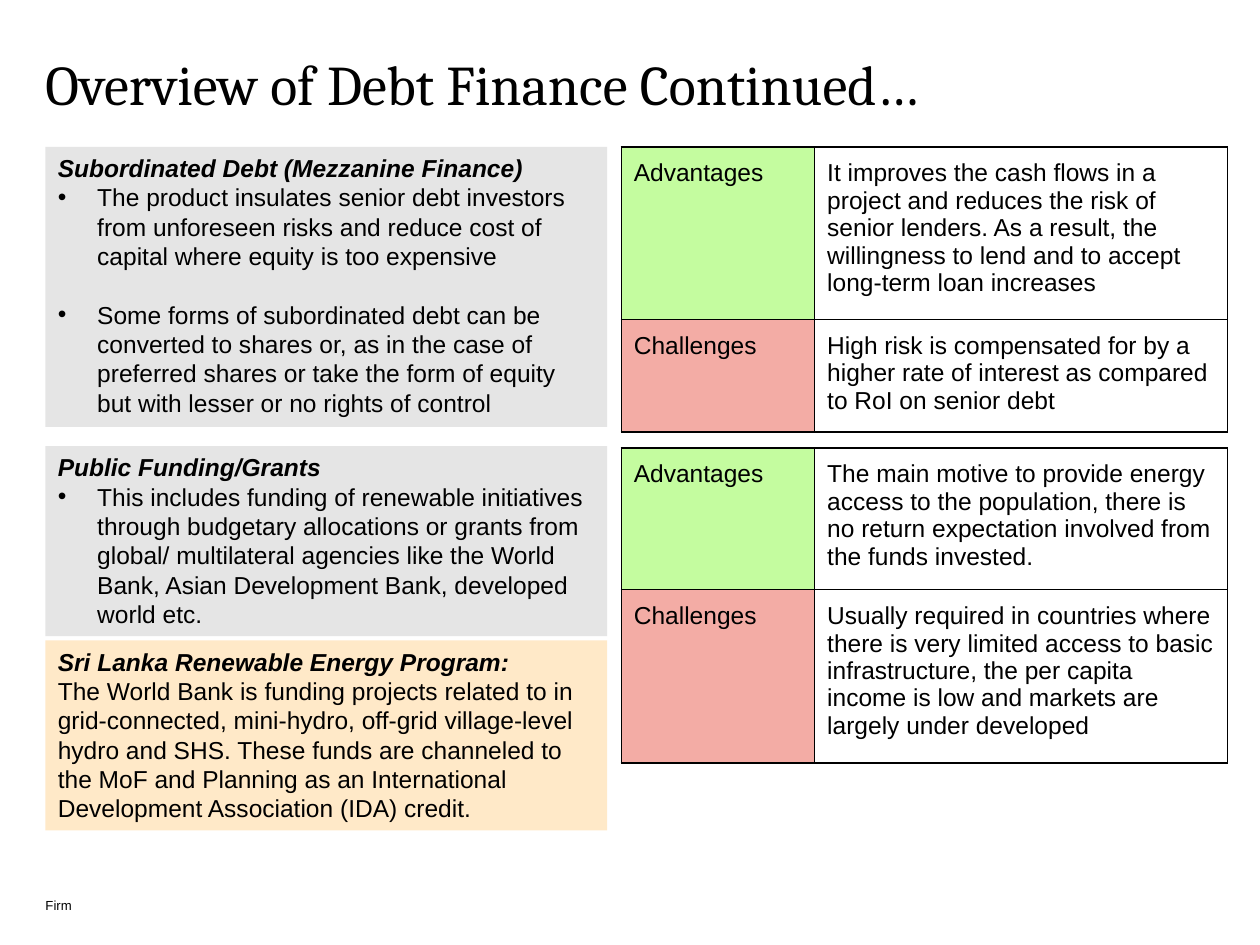
import pptx
import pptx.util
import pptx.dml.color
import pptx.enum.shapes
import pptx.enum.text
from lxml import etree

Pt = pptx.util.Pt
TOP = pptx.enum.text.MSO_ANCHOR.TOP

# Content
TITLE = "Overview of Debt Finance Continued…"
FOOTER = "Firm"
# Panels: top, height, fill, heading, bulleted, paragraphs
PANELS = [
    (84, 160, "E5E5E5", "Subordinated Debt (Mezzanine Finance)", True, [
        "The product insulates senior debt investors from unforeseen risks and "
        "reduce cost of capital where equity is too expensive",
        "Some forms of subordinated debt can be converted to shares or, as in "
        "the case of preferred shares or take the form of equity but with "
        "lesser or no rights of control"]),
    (255, 108.5, "E5E5E5", "Public Funding/Grants", True, [
        "This includes funding of renewable initiatives through budgetary "
        "allocations or grants from global/ multilateral agencies like the "
        "World Bank, Asian Development Bank, developed world etc."]),
    (366, 108.5, "FFE9C8", "Sri Lanka Renewable Energy Program:", False, [
        "The World Bank is funding projects related to in grid-connected, "
        "mini-hydro, off-grid village-level hydro and SHS. These funds are "
        "channeled to the MoF and Planning as an International Development "
        "Association (IDA) credit."]),
]
LABELS = [("Advantages", "C4FC9F"), ("Challenges", "F3ACA5")]
# Tables: top, row heights, row texts
TABLES = [
    (84, (98.5, 64.5), (
        "It improves the cash flows in a project and reduces the risk of senior "
        "lenders. As a result, the willingness to lend and to accept long-term "
        "loan increases",
        "High risk is compensated for by a higher rate of interest as compared "
        "to RoI on senior debt")),
    (256, (81, 99), (
        "The main motive to provide energy access to the population, there is "
        "no return expectation involved from the funds invested.",
        "Usually required in countries where there is very limited access to "
        "basic infrastructure, the per capita income is low and markets are "
        "largely under developed")),
]

# Formats
LEFT, WIDE = 26, 321
GRID, COLS = 355, (110.5, 236)
BODY = {"name": "Arial", "size": Pt(14), "bold": False, "italic": False}
HEAD = {**BODY, "bold": True, "italic": True}
SMALL = {**BODY, "size": Pt(7.5)}
LARGE = {**BODY, "name": "Cambria", "size": Pt(32)}
LEAD, TIGHT = Pt(16.75), Pt(15.7)
INDENT = Pt(22.5)


def paint(part, code):
    """Give a fill or font a solid colour."""
    shade = pptx.dml.color.RGBColor.from_string(code)
    if hasattr(part, "solid"):
        part.solid()
        part.fore_color.rgb = shade
    else:
        part.color.rgb = shade


def apply(item, form):
    for key, value in form.items():
        setattr(item, key, value)


def write(para, text, form, lead=1.0):
    run = para.add_run()
    run.text = text
    apply(run.font, form)
    paint(run.font, "000000")
    apply(para, {"alignment": pptx.enum.text.PP_ALIGN.LEFT, "line_spacing": lead})


def child(node, tag, **attrs):
    return etree.SubElement(node, pptx.oxml.ns.qn(tag), attrs)


def bullet(para):
    props = para._p.get_or_add_pPr()
    props.set("marL", str(INDENT))
    props.set("indent", str(-INDENT))
    child(props, "a:buFont", typeface="Arial")
    child(props, "a:buChar", char="•")


def border(cell):
    props = cell._tc.get_or_add_tcPr()
    for i, side in enumerate(("a:lnL", "a:lnR", "a:lnT", "a:lnB")):
        line = etree.Element(pptx.oxml.ns.qn(side), w=str(Pt(1)))
        child(child(line, "a:solidFill"), "a:srgbClr", val="000000")
        props.insert(i, line)


def margins(size):
    return {f"margin_{side}": Pt(size) for side in ("left", "right", "top", "bottom")}


deck = pptx.Presentation()
deck.slide_width, deck.slide_height = Pt(720), Pt(540)
slide = deck.slides.add_slide(deck.slide_layouts[5])
shapes = slide.shapes

# Title
title = shapes.title
apply(title, {"left": Pt(LEFT), "top": Pt(34), "width": Pt(667.5), "height": Pt(49)})
apply(title.text_frame, {**margins(0), "vertical_anchor": TOP, "word_wrap": True})
write(title.text_frame.paragraphs[0], TITLE, LARGE, 0.85)

# Text panels
for top, high, fill, head, listed, texts in PANELS:
    panel = shapes.add_shape(pptx.enum.shapes.MSO_SHAPE.RECTANGLE,
                             Pt(LEFT), Pt(top), Pt(WIDE), Pt(high))
    panel.shadow.inherit = False
    paint(panel.fill, fill)
    panel.line.fill.background()
    frame = panel.text_frame
    apply(frame, {"vertical_anchor": TOP, "word_wrap": True})
    write(frame.paragraphs[0], head, HEAD, LEAD)
    for i, text in enumerate(texts):
        para = frame.add_paragraph()
        write(para, text, BODY, LEAD)
        para.space_before = LEAD if i else Pt(0)
        if listed:
            bullet(para)

# Tables of advantages and challenges
for top, highs, texts in TABLES:
    table = shapes.add_table(len(highs), len(COLS), Pt(GRID), Pt(top),
                             Pt(sum(COLS)), Pt(sum(highs))).table
    apply(table, {"first_row": False, "horz_banding": False})
    for col, width in zip(table.columns, COLS):
        col.width = Pt(width)
    for row, high, (label, fill), text in zip(table.rows, highs, LABELS, texts):
        row.height = Pt(high)
        for cell, words, shade in zip(row.cells, (label, text), (fill, "FFFFFF")):
            apply(cell, {**margins(7.2), "vertical_anchor": TOP})
            write(cell.text_frame.paragraphs[0], words, BODY, TIGHT)
            paint(cell.fill, shade)
            border(cell)

# Footer
foot = shapes.add_textbox(Pt(LEFT), Pt(511), Pt(323), Pt(11)).text_frame
apply(foot, {**margins(0), "word_wrap": True,
             "vertical_anchor": pptx.enum.text.MSO_ANCHOR.BOTTOM})
write(foot.paragraphs[0], FOOTER, SMALL)

deck.save("out.pptx")
